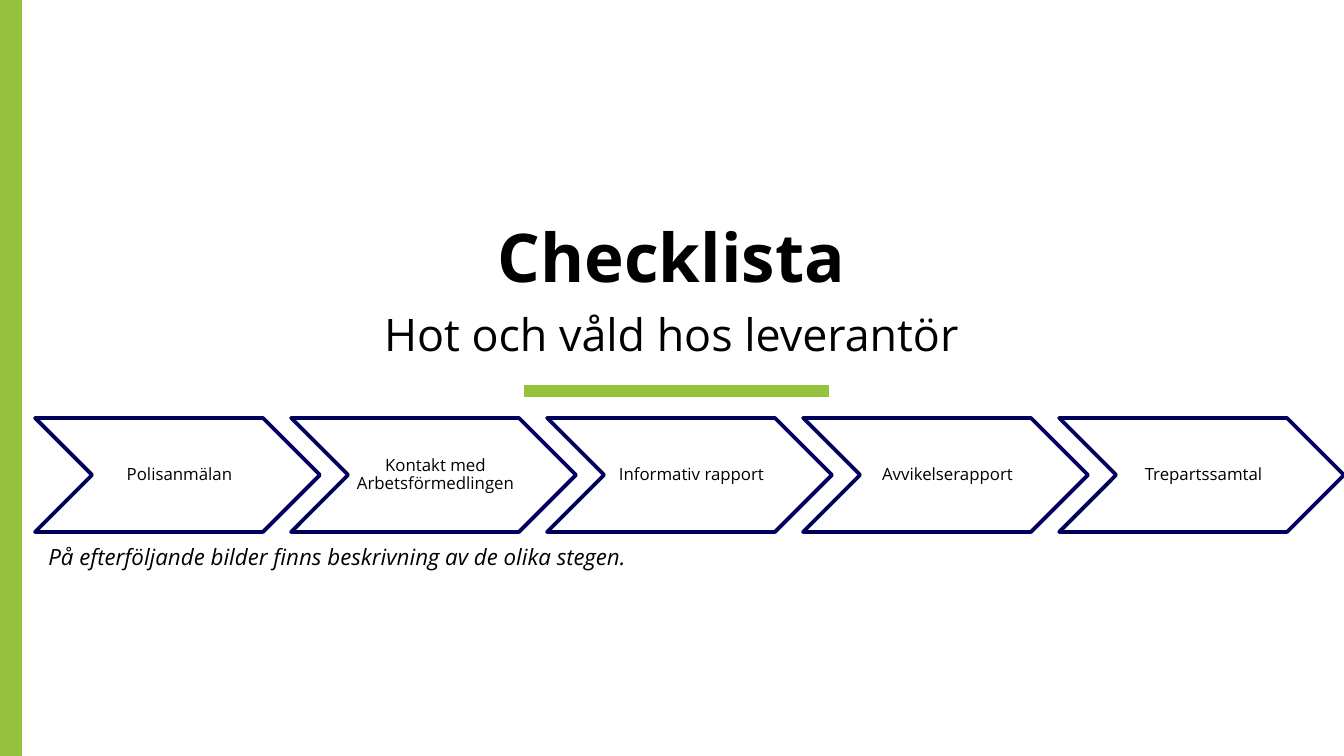
import pptx
import pptx.util
import pptx.dml.color
import pptx.enum.shapes
import pptx.enum.text
import pptx.oxml.ns
from lxml import etree

Pt = pptx.util.Pt
MSO_SHAPE = pptx.enum.shapes.MSO_SHAPE
ALIGN = pptx.enum.text.PP_ALIGN
ANCHOR = pptx.enum.text.MSO_ANCHOR

# Content
TITLE = "Checklista"
SUBTITLE = "Hot och våld hos leverantör"
STEPS = [
    "Polisanmälan",
    "Kontakt med Arbetsförmedlingen",
    "Informativ rapport",
    "Avvikelserapport",
    "Trepartssamtal",
]
NOTE = "På efterföljande bilder finns beskrivning av de olika stegen."

# Style and layout, in points
FONT = "Open Sans"
COLORS = {"green": "95C23D", "navy": "00005A", "white": "FFFFFF", "black": "000000"}
SLIDE_WIDTH, SLIDE_HEIGHT = 720, 405
STEP_LEFT, STEP_TOP, STEP_WIDTH, STEP_HEIGHT = 18.8, 223.9, 152.6, 61.1
STEP_PITCH = (SLIDE_WIDTH - STEP_WIDTH - STEP_LEFT) / (len(STEPS) - 1)


def color(name):
    return pptx.dml.color.RGBColor.from_string(COLORS[name])


def write(shape, text, size, align=ALIGN.CENTER, anchor=ANCHOR.TOP,
          insets=(0, 0, 0, 0), bold=False, italic=False):
    frame = shape.text_frame
    frame.word_wrap = True
    frame.vertical_anchor = anchor
    (frame.margin_left, frame.margin_top,
     frame.margin_right, frame.margin_bottom) = map(Pt, insets)
    paragraph = frame.paragraphs[0]
    paragraph.text = text
    paragraph.alignment = align
    font = paragraph.font
    font.name, font.size, font.bold, font.italic = FONT, Pt(size), bold, italic
    font.color.rgb = color("black")
    return paragraph


def add_text(box, text, size, **style):
    return write(slide.shapes.add_textbox(*map(Pt, box)), text, size, **style)


def add_filled(kind, box, fill, line, line_width):
    shape = slide.shapes.add_shape(kind, *map(Pt, box))
    shape.shadow.inherit = False
    shape.fill.solid()
    shape.fill.fore_color.rgb = color(fill)
    shape.line.color.rgb = color(line)
    shape.line.width = Pt(line_width)
    return shape


presentation = pptx.Presentation()
presentation.slide_width = Pt(SLIDE_WIDTH)
presentation.slide_height = Pt(SLIDE_HEIGHT)
slide = presentation.slides.add_slide(presentation.slide_layouts[6])

# Side band and rule under the headings
add_filled(MSO_SHAPE.RECTANGLE, (0, 0, 11.5, SLIDE_HEIGHT), "green", "green", 1)
rule = slide.shapes.add_connector(
    pptx.enum.shapes.MSO_CONNECTOR.STRAIGHT, Pt(280.8), Pt(209.5), Pt(444.2), Pt(209.5))
rule.line.color.rgb = color("green")
rule.line.width = Pt(6)
etree.SubElement(rule._element.spPr, pptx.oxml.ns.qn("a:effectLst"))

# Headings
add_text((133.2, 82.1, 452.9, 76.3), TITLE, 36, anchor=ANCHOR.BOTTOM, bold=True)
add_text((133.2, 164.2, 452.9, 61.2), SUBTITLE, 24)

# Row of steps
for index, step in enumerate(STEPS):
    left = STEP_LEFT + index * STEP_PITCH
    chevron = add_filled(MSO_SHAPE.CHEVRON, (left, STEP_TOP, STEP_WIDTH, STEP_HEIGHT),
                         "white", "navy", 2)
    paragraph = write(chevron, step, 9, anchor=ANCHOR.MIDDLE, insets=(3, 1, 1, 1))
    paragraph.line_spacing = 0.9

# Note
add_text((18.8, 287.3, 360, 21.6), NOTE, 12, align=ALIGN.LEFT,
         insets=(7.2, 3.6, 7.2, 3.6), italic=True)

presentation.save("out.pptx")
